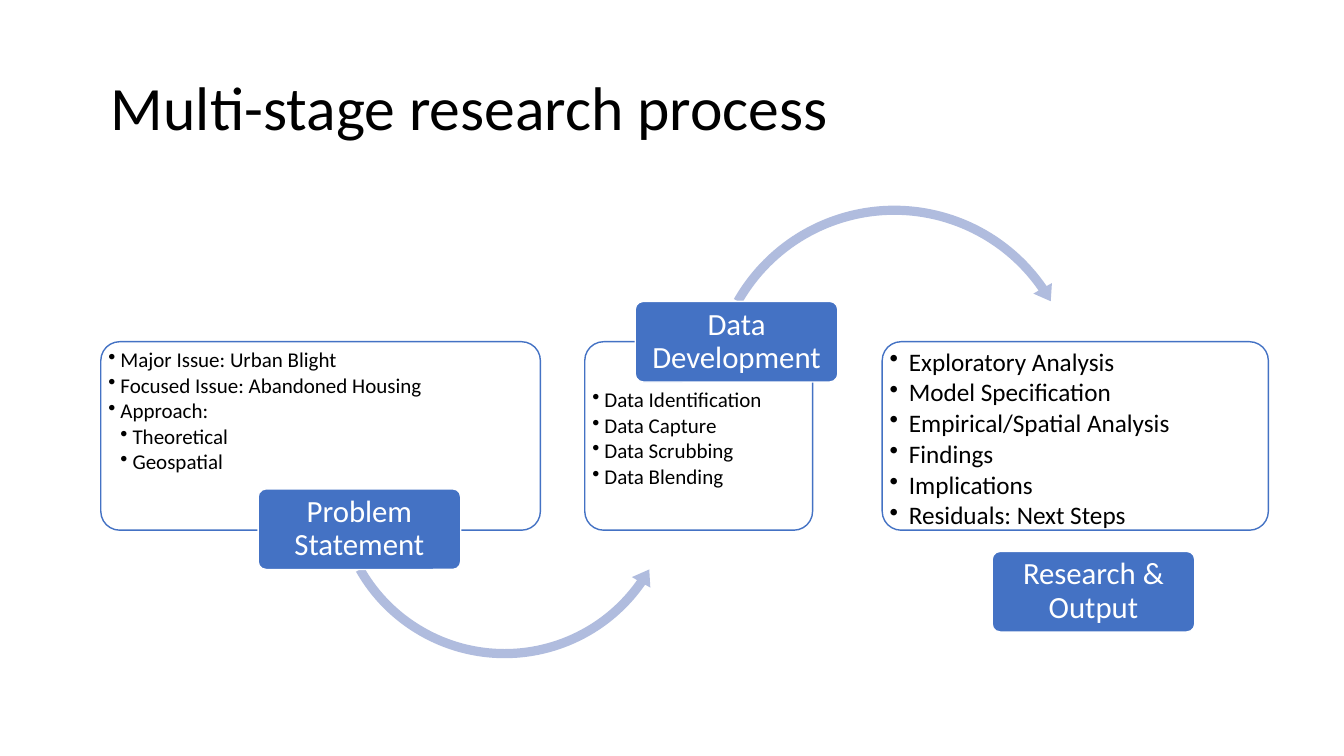
from lxml.etree import SubElement
from pptx import Presentation
from pptx.dml.color import RGBColor
from pptx.enum.shapes import MSO_SHAPE
from pptx.enum.text import MSO_ANCHOR, PP_ALIGN
from pptx.oxml.ns import qn
from pptx.util import Pt

PX = 9144  # 100 px to the inch
FONT = "Calibri"
BLUE = RGBColor(0x44, 0x72, 0xC4)
PALE_BLUE = RGBColor(0xB0, 0xBC, 0xDE)
WHITE = RGBColor(0xFF, 0xFF, 0xFF)
BLACK = RGBColor(0x00, 0x00, 0x00)

PANEL_TOP, PANEL_H = 339, 187
CAPTION_W, CAPTION_H = 201, 80

# Each stage: panel left and width, top inset, text size, indent, items, caption
STAGES = [
    (100, 436, 2, 15, 12,
     [("Major Issue: Urban Blight", 1), ("Focused Issue: Abandoned Housing", 1),
      ("Approach:", 1), ("Theoretical", 2), ("Geospatial", 2)],
     ("Problem Statement", 256, 485)),
    (580, 226, 42, 15, 12,
     [("Data Identification", 1), ("Data Capture", 1),
      ("Data Scrubbing", 1), ("Data Blending", 1)],
     ("Data Development", 630, 299)),
    (875, 383, 2, 18, 19,
     [("Exploratory Analysis", 1), ("Model Specification", 1),
      ("Empirical/Spatial Analysis", 1), ("Findings", 1),
      ("Implications", 1), ("Residuals: Next Steps", 1)],
     ("Research & Output", 984, 547)),
]

# Arrow that leaves each of the first two stages: shape, left, top, size, adjustments
ARROWS = [
    (MSO_SHAPE.LEFT_CIRCULAR_ARROW, 325, 308, 351,
     (0.026, 3.153, 20.908, 90.245, 0.03)),
    (MSO_SHAPE.CIRCULAR_ARROW, 698, 198, 378,
     (0.024, 2.915, 195.33, 125.755, 0.028)),
]


def add_shape(kind, left, top, width, height, adjustments, fill, line=None):
    sp = s.shapes.add_shape(kind, left * PX, top * PX, width * PX, height * PX)
    sp.shadow.inherit = False
    for i, value in enumerate(adjustments):
        sp.adjustments[i] = value
    sp.fill.solid()
    sp.fill.fore_color.rgb = fill
    if line is None:
        sp.line.fill.background()
    else:
        sp.line.color.rgb = line
        sp.line.width = Pt(1)
    return sp


def add_text(p, text, size, color, align):
    p.alignment = align
    p.line_spacing = 0.9
    r = p.add_run()
    r.text = text
    r.font.name = FONT
    r.font.size = Pt(size)
    r.font.color.rgb = color


prs = Presentation()
prs.slide_width, prs.slide_height = 1333 * PX, 750 * PX
s = prs.slides.add_slide(prs.slide_layouts[5])

# Title
title = s.shapes.title
title.left, title.top, title.width, title.height = 100 * PX, 68 * PX, 1133 * PX, 83 * PX
title.text_frame.vertical_anchor = MSO_ANCHOR.MIDDLE
add_text(title.text_frame.paragraphs[0], "Multi-stage research process", 44, BLACK, PP_ALIGN.LEFT)

for n, (left, width, inset_top, size, indent, items, caption) in enumerate(STAGES):
    # Panel with its bullet list
    panel = add_shape(MSO_SHAPE.ROUNDED_RECTANGLE, left, PANEL_TOP, width, PANEL_H,
                      (0.1,), WHITE, BLUE)
    color = panel.fill._xPr.find(qn("a:solidFill"))[0]
    SubElement(color, qn("a:alpha"), val="90000")
    tf = panel.text_frame
    tf.word_wrap = True
    tf.vertical_anchor = MSO_ANCHOR.TOP
    tf.margin_left = tf.margin_right = 2 * PX
    tf.margin_top, tf.margin_bottom = inset_top * PX, 0
    for i, (text, level) in enumerate(items):
        p = tf.paragraphs[0] if i == 0 else tf.add_paragraph()
        p.level = level
        pPr = p._p.get_or_add_pPr()
        pPr.set("marL", str(level * indent * PX))
        pPr.set("indent", str(-indent * PX))
        SubElement(pPr, qn("a:buChar"), char="•")
        p.space_after = Pt(0.14 * size)
        add_text(p, text, size, BLACK, PP_ALIGN.LEFT)

    # Arrow to the next stage
    if n < len(ARROWS):
        kind, x, y, side, adjustments = ARROWS[n]
        add_shape(kind, x, y, side, side, adjustments, PALE_BLUE)

    # Stage caption
    label, x, y = caption
    box = add_shape(MSO_SHAPE.ROUNDED_RECTANGLE, x, y, CAPTION_W, CAPTION_H,
                    (0.1,), BLUE, WHITE)
    tf = box.text_frame
    tf.word_wrap = True
    tf.vertical_anchor = MSO_ANCHOR.MIDDLE
    tf.margin_left = tf.margin_right = 5 * PX
    tf.margin_top = tf.margin_bottom = 3 * PX
    add_text(tf.paragraphs[0], label, 22, WHITE, PP_ALIGN.CENTER)

prs.save("out.pptx")
